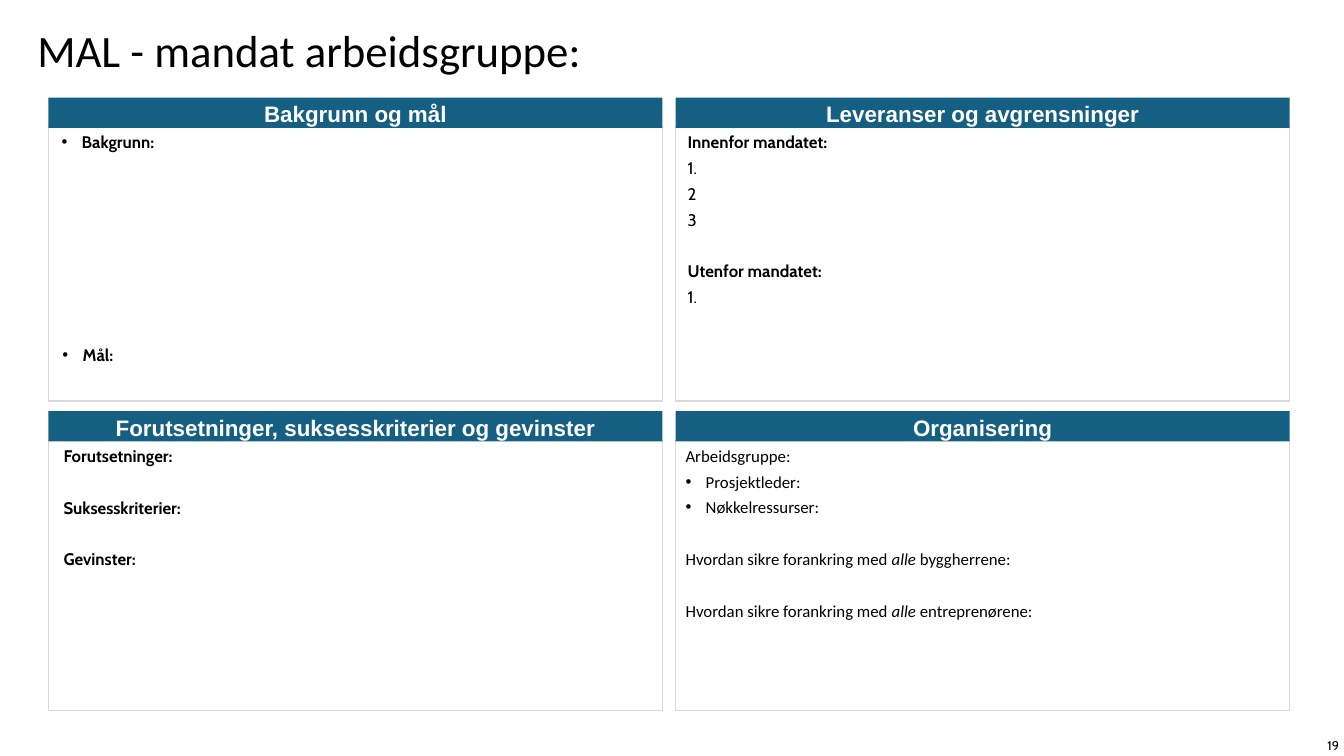
from lxml import etree
from pptx import Presentation
from pptx.dml.color import RGBColor
from pptx.enum.shapes import MSO_SHAPE
from pptx.enum.text import MSO_ANCHOR, PP_ALIGN
from pptx.oxml.ns import qn
from pptx.util import Inches, Pt

RECT = MSO_SHAPE.RECTANGLE
TOP, MIDDLE = MSO_ANCHOR.TOP, MSO_ANCHOR.MIDDLE
LEFT, CENTER, RIGHT = PP_ALIGN.LEFT, PP_ALIGN.CENTER, PP_ALIGN.RIGHT
BLACK = RGBColor(0x00, 0x00, 0x00)
WHITE = RGBColor(0xFF, 0xFF, 0xFF)
TEAL = RGBColor(0x15, 0x60, 0x82)
GREY = RGBColor(0xD9, 0xD9, 0xD9)

# Grid of four panels
LEFT_X, TOP_Y = 0.48, 0.97
COL_STEP, ROW_STEP = 6.22, 3.11
PANEL_W, BAR_H, FRAME_DY = 6.09, 0.3, 0.29
FRAME_H = [2.72, 2.68]
LINE, GAP = 4, 22.6  # space before a line, and before a new section

prs = Presentation()
prs.slide_width, prs.slide_height = Inches(13.33), Inches(7.5)
s = prs.slides.add_slide(prs.slide_layouts[6])


def write(sp, lines, font="Cabin", size=12, color=BLACK, align=LEFT,
          anchor=TOP, inset=0.04, spacing=None):
    """Each line is (text, bold, bullet, space before); *x* marks italics."""
    tf = sp.text_frame
    tf.word_wrap = True
    tf.vertical_anchor = anchor
    tf.margin_left = tf.margin_right = Inches(inset)
    tf.margin_top = tf.margin_bottom = Inches(inset)
    for i, (text, bold, bullet, before) in enumerate(lines):
        p = tf.add_paragraph() if i else tf.paragraphs[0]
        p.alignment = align
        if bullet:
            pPr = p._p.get_or_add_pPr()
            pPr.set("marL", str(Inches(0.2)))
            pPr.set("indent", str(-Inches(0.2)))
            etree.SubElement(pPr, qn("a:buFont")).set("typeface", "Arial")
            etree.SubElement(pPr, qn("a:buChar")).set("char", "•")
        p.space_before = Pt(before if i else 0)
        if spacing:
            p.line_spacing = spacing
        for j, part in enumerate(text.split("*")):
            r = p.add_run()
            r.text = part
            r.font.name, r.font.size = font, Pt(size)
            r.font.bold, r.font.italic = bold, j % 2 == 1
            r.font.color.rgb = color


def add_rect(x, y, w, h, fill=None, line=None):
    sp = s.shapes.add_shape(RECT, Inches(x), Inches(y), Inches(w), Inches(h))
    sp.shadow.inherit = False
    if fill is None:
        sp.fill.background()
    else:
        sp.fill.solid()
        sp.fill.fore_color.rgb = fill
    if line is None:
        sp.line.fill.background()
    else:
        sp.line.color.rgb = line
        sp.line.width = Pt(1)
    return sp


# Panels: frame and heading bar
headings = [["Bakgrunn og mål", "Leveranser og avgrensninger"],
            ["Forutsetninger, suksesskriterier og gevinster", "Organisering"]]
for row, names in enumerate(headings):
    for col, name in enumerate(names):
        x, y = LEFT_X + col * COL_STEP, TOP_Y + row * ROW_STEP
        add_rect(x, y + FRAME_DY, PANEL_W, FRAME_H[row], line=GREY)
        bar = add_rect(x, y, PANEL_W, BAR_H, fill=TEAL)
        write(bar, [(name, True, False, 0)], font="Arial", size=16, color=WHITE,
              align=CENTER, anchor=MIDDLE, inset=0.06, spacing=1.06)

# Title, panel texts and page number: place, lines, format
texts = [
    ((0.37, 0.29, 12.54, 0.51), [("MAL - mandat arbeidsgruppe:", False, False, 0)],
     dict(font="Calibri", size=32, inset=0, spacing=0.9)),
    ((0.57, 1.27, 5.98, 2.1), [("Bakgrunn:", True, True, 0)], {}),
    ((0.58, 3.38, 5.56, 0.53), [("Mål:", True, True, 0)], {}),
    ((6.78, 1.27, 6.05, 2.68),
     [("Innenfor mandatet:", True, False, 0),
      ("1.", False, False, LINE),
      ("2", False, False, LINE),
      ("3", False, False, LINE),
      ("Utenfor mandatet:", True, False, GAP),
      ("1.", False, False, LINE)], {}),
    ((0.59, 4.38, 5.96, 2.68),
     [("Forutsetninger:", True, False, 0),
      ("Suksesskriterier:", True, False, GAP),
      ("Gevinster:", True, False, GAP)], {}),
    ((6.76, 4.38, 6.07, 2.68),
     [("Arbeidsgruppe:", False, False, 0),
      ("Prosjektleder:", False, True, LINE),
      ("Nøkkelressurser:", False, True, LINE),
      ("Hvordan sikre forankring med *alle* byggherrene:", False, False, GAP),
      ("Hvordan sikre forankring med *alle* entreprenørene:", False, False, GAP)],
     dict(font="Calibri")),
    ((12.95, 7.29, 0.38, 0.21), [("19", False, False, 0)],
     dict(size=9, align=RIGHT, anchor=MIDDLE, inset=0.05)),
]
for place, lines, style in texts:
    write(s.shapes.add_textbox(*map(Inches, place)), lines, **style)

prs.save("out.pptx")
